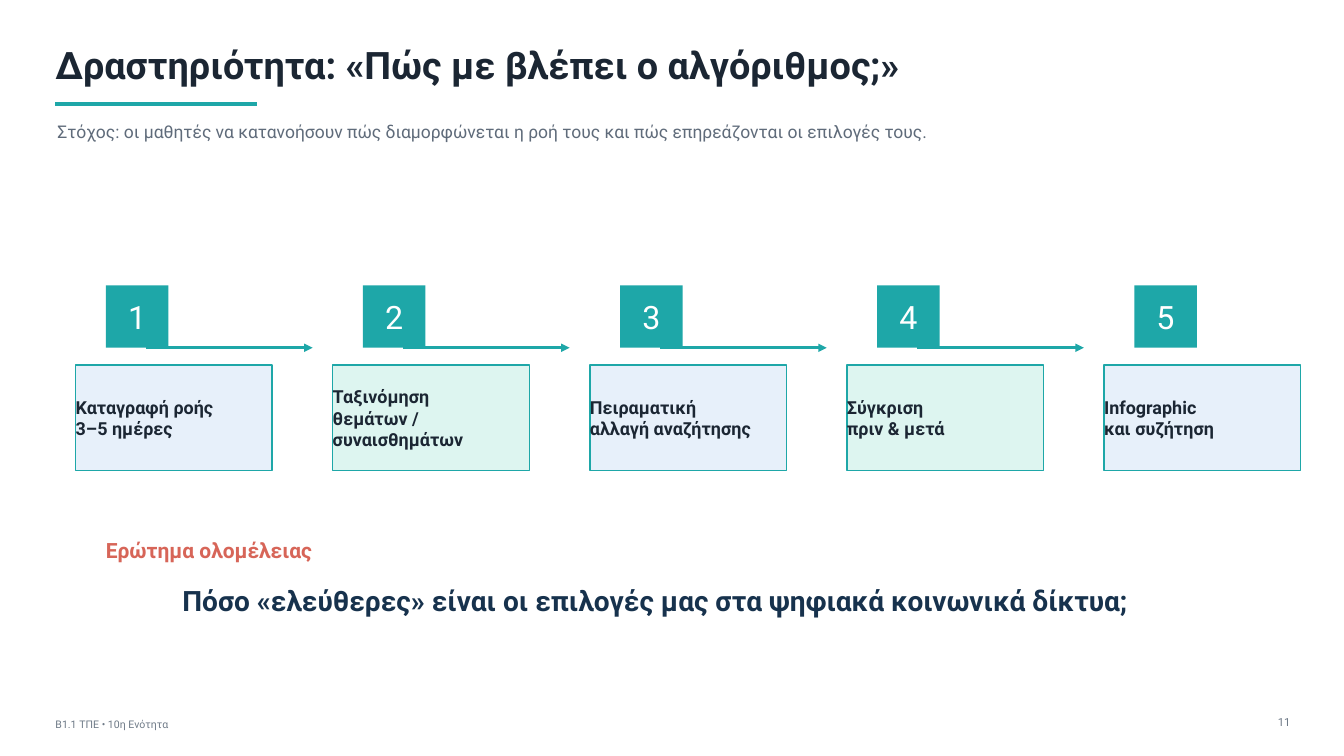
from dataclasses import dataclass

from lxml import etree
from pptx import Presentation
from pptx.dml.color import RGBColor
from pptx.enum import shapes, text
from pptx.oxml import ns
from pptx.util import Inches, Pt


@dataclass(frozen=True)
class Theme:
    font: str = "Roboto"
    ink: str = "1B2633"
    navy: str = "17324D"
    muted: str = "5F6B7A"
    footer: str = "6E7A87"
    teal: str = "1EA7A8"
    coral: str = "D76558"
    white: str = "FFFFFF"
    step_fills: tuple = ("E7F0FA", "DDF5F0")
    title_size: float = 27
    number_size: float = 23
    question_size: float = 20
    label_size: float = 15
    step_size: float = 12.8
    goal_size: float = 12.5
    page_size: float = 8
    footer_size: float = 7.5


theme = Theme()
LEFT, CENTER, RIGHT = text.PP_ALIGN.LEFT, text.PP_ALIGN.CENTER, text.PP_ALIGN.RIGHT


def write(shape, content, size, color, bold=False, align=LEFT):
    """Fill a shape with uniformly formatted, vertically centred text without insets."""
    frame = shape.text_frame
    frame.text = content
    frame.word_wrap = True
    frame.auto_size = text.MSO_AUTO_SIZE.NONE
    frame.vertical_anchor = text.MSO_ANCHOR.MIDDLE
    frame.margin_left = frame.margin_right = frame.margin_top = frame.margin_bottom = 0
    for paragraph in frame.paragraphs:
        paragraph.alignment = align
        for run in paragraph.runs:
            run.font.name = theme.font
            run.font.size = Pt(size)
            run.font.bold = bold
            run.font.color.rgb = RGBColor.from_string(color)


def add_line(x1, x2, y, width, arrow=False):
    """Draw a horizontal teal line, optionally with an arrowhead at its right end."""
    line = slide.shapes.add_connector(
        shapes.MSO_CONNECTOR.STRAIGHT, Inches(x1), Inches(y), Inches(x2), Inches(y))
    line.line.color.rgb = RGBColor.from_string(theme.teal)
    line.line.width = Pt(width)
    if arrow:
        etree.SubElement(line.line._get_or_add_ln(), ns.qn("a:tailEnd"), type="triangle")
    etree.SubElement(line._element.spPr, ns.qn("a:effectLst"))


presentation = Presentation()
presentation.slide_width = Inches(13.33)
presentation.slide_height = Inches(7.5)
slide = presentation.slides.add_slide(presentation.slide_layouts[5])

# Heading
title = slide.shapes.title
title.left, title.top = Inches(0.55), Inches(0.36)
title.width, title.height = Inches(9.6), Inches(0.55)
write(title, "Δραστηριότητα: «Πώς με βλέπει ο αλγόριθμος;»",
      theme.title_size, theme.ink, bold=True)
add_line(0.55, 2.55, 1.03, 3)

# Five steps, with arrows behind the numbered squares
steps = [
    "Καταγραφή ροής\n3–5 ημέρες",
    "Ταξινόμηση\nθεμάτων / συναισθημάτων",
    "Πειραματική\nαλλαγή αναζήτησης",
    "Σύγκριση\nπριν & μετά",
    "Infographic\nκαι συζήτηση",
]
step_left, step_pitch = 0.75, 2.55
square = 0.62

for index, step in enumerate(steps):
    left = step_left + index * step_pitch
    if index < len(steps) - 1:
        add_line(left + 0.7, left + 2.35, 3.45, 2, arrow=True)

    number = slide.shapes.add_shape(
        shapes.MSO_SHAPE.RECTANGLE, Inches(left + 0.3), Inches(2.83),
        Inches(square), Inches(square))
    number.fill.solid()
    number.fill.fore_color.rgb = RGBColor.from_string(theme.teal)
    number.line.fill.background()
    number.shadow.inherit = False
    write(number, str(index + 1), theme.number_size, theme.white, align=CENTER)

    card = slide.shapes.add_shape(
        shapes.MSO_SHAPE.RECTANGLE, Inches(left), Inches(3.62), Inches(1.95), Inches(1.05))
    card.fill.solid()
    card.fill.fore_color.rgb = RGBColor.from_string(theme.step_fills[index % 2])
    card.line.color.rgb = RGBColor.from_string(theme.teal)
    card.line.width = Pt(1)
    card.shadow.inherit = False
    write(card, step, theme.step_size, theme.ink, bold=True)

# Goal, plenary question and footer
captions = [
    ((0.57, 1.13, 9.2, 0.34),
     "Στόχος: οι μαθητές να κατανοήσουν πώς διαμορφώνεται η ροή τους "
     "και πώς επηρεάζονται οι επιλογές τους.",
     theme.goal_size, theme.muted, False, LEFT),
    ((1.05, 5.3, 2.8, 0.32), "Ερώτημα ολομέλειας",
     theme.label_size, theme.coral, True, LEFT),
    ((1.05, 5.75, 10.9, 0.42),
     "Πόσο «ελεύθερες» είναι οι επιλογές μας στα ψηφιακά κοινωνικά δίκτυα;",
     theme.question_size, theme.navy, True, CENTER),
    ((0.55, 7.08, 5, 0.22), "Β1.1 ΤΠΕ • 10η Ενότητα",
     theme.footer_size, theme.footer, False, LEFT),
    ((12.35, 7.04, 0.45, 0.25), "11",
     theme.page_size, theme.footer, False, RIGHT),
]
for box, content, size, color, bold, align in captions:
    caption = slide.shapes.add_textbox(*map(Inches, box))
    write(caption, content, size, color, bold, align)

presentation.save("out.pptx")
